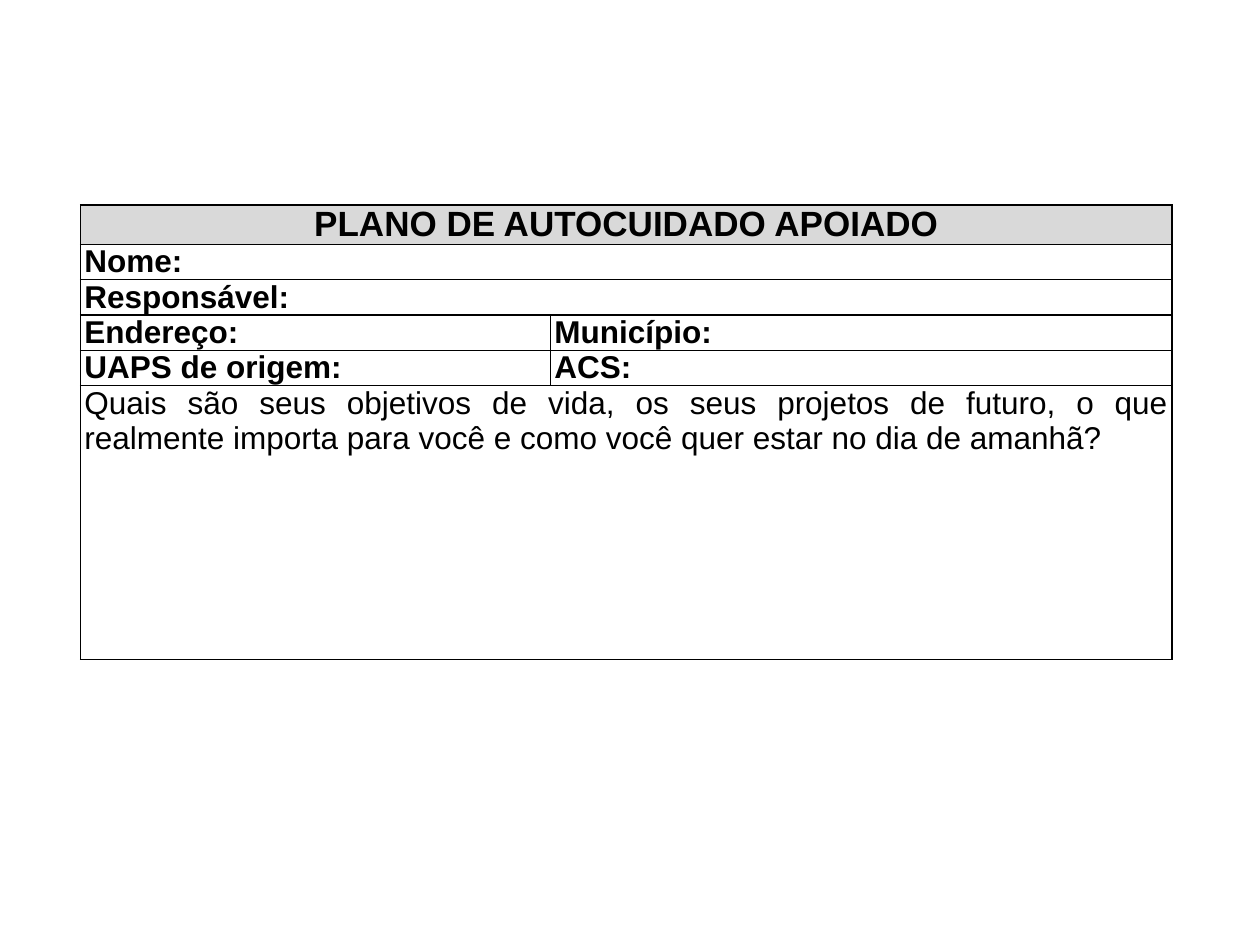
from pptx import Presentation
from pptx.dml.color import RGBColor as Rgb
from pptx.enum.text import MSO_ANCHOR as Anchor, PP_ALIGN as Align
from pptx.oxml import parse_xml
from pptx.oxml.ns import nsdecls
from pptx.util import Pt

BLACK = Rgb(0, 0, 0)
WHITE = Rgb(255, 255, 255)
GREY = Rgb(0xD9, 0xD9, 0xD9)

COLS = [268.6, 355]
ROWS = [22.4] + [20.2] * 4 + [156.6]
TITLE = "PLANO DE AUTOCUIDADO APOIADO"
FIELDS = [
    ["Nome: "],
    ["Responsável: "],
    ["Endereço: ", "Município: "],
    ["UAPS de origem: ", "ACS: "],
]
GOAL = ("Quais são seus objetivos de vida, os seus projetos de futuro, "
        "o que realmente importa para você e como você quer estar "
        "no dia de amanhã?")


def add_grid(slide):
    frame = slide.shapes.add_table(len(ROWS), len(COLS), Pt(46.1), Pt(117.2),
                                   Pt(sum(COLS)), Pt(sum(ROWS)))
    grid = frame.table
    grid.first_row = grid.horz_banding = False
    for col, width in zip(grid.columns, COLS):
        col.width = Pt(width)
    for row, height in zip(grid.rows, ROWS):
        row.height = Pt(height)
    return grid


def add_edges(cell):
    props = cell._tc.get_or_add_tcPr()
    for i, side in enumerate(("lnL", "lnR", "lnT", "lnB")):
        props.insert(i, parse_xml(
            f'<a:{side} {nsdecls("a")} w="{Pt(1)}"><a:solidFill>'
            f'<a:srgbClr val="{BLACK}"/></a:solidFill></a:{side}>'))


def style_cell(cell, fill):
    cell.margin_left = cell.margin_right = Pt(2.2)
    cell.margin_top = cell.margin_bottom = 0
    cell.fill.solid()
    cell.fill.fore_color.rgb = fill
    add_edges(cell)


def add_text(cell, text, size=18, bold=True, align=Align.JUSTIFY,
             anchor=Anchor.MIDDLE):
    cell.vertical_anchor = anchor
    para = cell.text_frame.paragraphs[0]
    para.alignment = align
    run = para.add_run()
    run.text = text
    font = run.font
    font.name, font.size, font.bold = "Arial", Pt(size), bold
    font.color.rgb = BLACK


def main():
    deck = Presentation()
    deck.slide_width, deck.slide_height = Pt(720), Pt(540)
    slide = deck.slides.add_slide(deck.slide_layouts[6])

    # Form grid
    grid = add_grid(slide)
    for r in range(len(ROWS)):
        for c in range(len(COLS)):
            style_cell(grid.cell(r, c), WHITE if r else GREY)

    # Title row
    grid.cell(0, 0).merge(grid.cell(0, 1))
    add_text(grid.cell(0, 0), TITLE, size=20, align=Align.CENTER)

    # Field rows: a lone label takes the full width
    for r, labels in enumerate(FIELDS, 1):
        if len(labels) == 1:
            grid.cell(r, 0).merge(grid.cell(r, 1))
        for c, label in enumerate(labels):
            add_text(grid.cell(r, c), label)

    # Goal row
    last = len(ROWS) - 1
    grid.cell(last, 0).merge(grid.cell(last, 1))
    add_text(grid.cell(last, 0), GOAL, bold=False, anchor=Anchor.TOP)

    deck.save("out.pptx")


if __name__ == "__main__":
    main()
